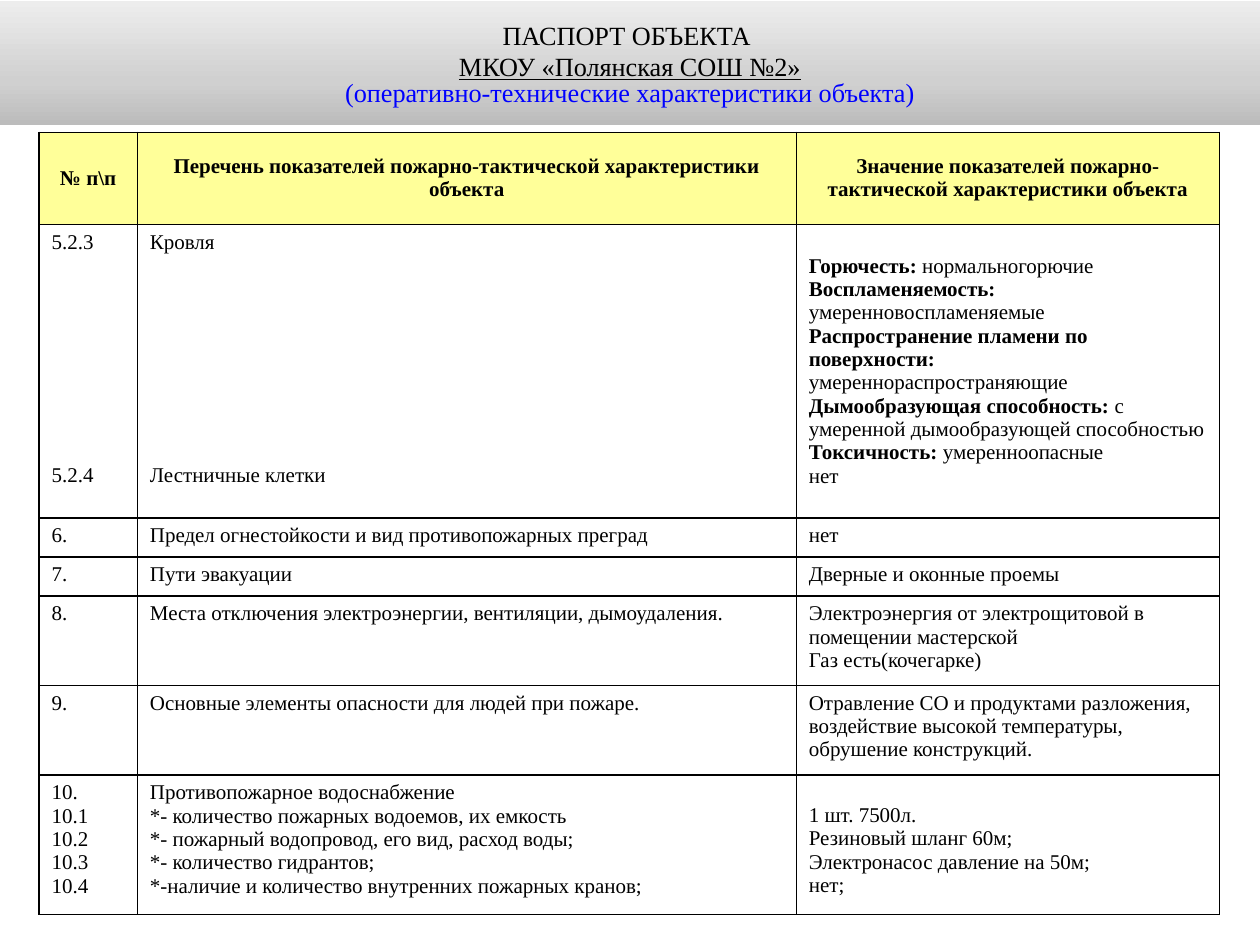
from copy import deepcopy
from dataclasses import dataclass

from lxml.etree import SubElement
from pptx import Presentation
from pptx.dml.color import RGBColor
from pptx.enum.shapes import MSO_SHAPE
from pptx.enum.text import MSO_ANCHOR, PP_ALIGN
from pptx.oxml.ns import qn
from pptx.util import Inches, Pt


@dataclass(frozen=True)
class Theme:
    font: str = "Times New Roman"
    title_size: float = 15
    body_size: float = 12
    text: str = "000000"
    accent: str = "0000FF"
    head_fill: str = "FFFF99"
    cell_fill: str = "FFFFFF"
    border: str = "000000"
    border_width: float = 1
    banner: tuple = ((0, "BCBCBC"), (0.35, "D0D0D0"), (1, "EDEDED"))


THEME = Theme()

COLS = (0.78, 5.23, 3.36)
ROW_HEIGHTS = (0.73, 2.33, 0.31, 0.31, 0.71, 0.71, 1.11)
ROWS = (
    ("№ п\\п",
     "Перечень показателей пожарно-тактической характеристики объекта",
     "Значение показателей пожарно-тактической характеристики объекта"),
    ("5.2.3\n5.2.4",
     "Кровля\nЛестничные клетки",
     "|Горючесть:| нормальногорючие\n"
     "|Воспламеняемость: |умеренновоспламеняемые\n"
     "|Распространение пламени по поверхности:|\n"
     "умереннораспространяющие\n"
     "|Дымообразующая способность: |с умеренной дымообразующей способностью\n"
     "|Токсичность:| умеренноопасные\n"
     "нет"),
    ("6.", "Предел огнестойкости и вид противопожарных преград", "нет"),
    ("7.", "Пути эвакуации", "Дверные и оконные проемы"),
    ("8.",
     "Места отключения электроэнергии, вентиляции, дымоудаления.",
     "Электроэнергия от электрощитовой в помещении мастерской\n"
     "Газ есть(кочегарке)"),
    ("9.",
     "Основные элементы опасности для людей при пожаре.",
     "Отравление СО и продуктами разложения, воздействие высокой температуры, "
     "обрушение конструкций."),
    ("10.\n10.1\n10.2\n10.3\n10.4",
     "Противопожарное водоснабжение\n"
     "*- количество пожарных водоемов, их емкость\n"
     "*- пожарный водопровод, его вид, расход воды;\n"
     "*- количество гидрантов;\n"
     "*-наличие и количество внутренних пожарных кранов;",
     "1 шт. 7500л.\nРезиновый шланг 60м;\nЭлектронасос давление на 50м;\nнет;"),
)
ROOF_ROW, WATER_ROW = 1, 6
STAIRS_GAP = 120
WATER_INSET = 0.23


def put_text(p, text, size=THEME.body_size, color=THEME.text, bold=False,
             underline=False, align=PP_ALIGN.LEFT, spacing=None, before=0):
    p.alignment = align
    p.space_before = Pt(before)
    if spacing:
        p.line_spacing = spacing
    for i, part in enumerate(text.split("|")):
        if part:
            r = p.add_run()
            r.text = part
            r.font.name = THEME.font
            r.font.size = Pt(size)
            r.font.bold = bold or i % 2 == 1
            r.font.underline = underline
            r.font.color.rgb = RGBColor.from_string(color)


class SlideBuilder:
    def __init__(self, prs, theme):
        self.theme = theme
        self.s = prs.slides.add_slide(prs.slide_layouts[6])

    def banner(self, x, y, w, h, lines):
        sp = self.s.shapes.add_shape(MSO_SHAPE.RECTANGLE, Inches(x), Inches(y),
                                     Inches(w), Inches(h))
        sp.shadow.inherit = False
        sp.line.fill.background()
        sp.fill.gradient()
        sp.fill.gradient_angle = 90
        stops = sp._element.spPr.find(".//" + qn("a:gsLst"))
        stops.insert(1, deepcopy(stops[0]))
        for stop, (position, color) in zip(sp.fill.gradient_stops, self.theme.banner):
            stop.position = position
            stop.color.rgb = RGBColor.from_string(color)
        tf = sp.text_frame
        tf.word_wrap = True
        tf.vertical_anchor = MSO_ANCHOR.MIDDLE
        tf.margin_left = tf.margin_right = Inches(0.09)
        tf.margin_top = tf.margin_bottom = Inches(0.05)
        for i, (text, fmt) in enumerate(lines):
            p = tf.add_paragraph() if i else tf.paragraphs[0]
            put_text(p, text, size=self.theme.title_size, align=PP_ALIGN.CENTER, **fmt)

    def table(self, x, y, cols, heights, rows):
        tbl = self.s.shapes.add_table(len(rows), len(cols), Inches(x), Inches(y),
                                      Inches(sum(cols)), Inches(sum(heights))).table
        for col, w in zip(tbl.columns, cols):
            col.width = Inches(w)
        for row, h in zip(tbl.rows, heights):
            row.height = Inches(h)
        for i, texts in enumerate(rows):
            for j, text in enumerate(texts):
                self.cell(tbl.cell(i, j), text, header=i == 0,
                          middle=i == 0 or (i, j) == (ROOF_ROW, 2),
                          gap=STAIRS_GAP if i == ROOF_ROW and j < 2 else 0,
                          top=WATER_INSET if (i, j) == (WATER_ROW, 2) else 0.05)

    def cell(self, cell, text, header, middle, gap, top):
        cell.margin_left = cell.margin_right = Inches(0.1)
        cell.margin_top, cell.margin_bottom = Inches(top), Inches(0.05)
        cell.vertical_anchor = MSO_ANCHOR.MIDDLE if middle else MSO_ANCHOR.TOP
        self.borders(cell)
        cell.fill.solid()
        cell.fill.fore_color.rgb = RGBColor.from_string(
            self.theme.head_fill if header else self.theme.cell_fill)
        tf = cell.text_frame
        for i, line in enumerate(text.split("\n")):
            p = tf.add_paragraph() if i else tf.paragraphs[0]
            put_text(p, line, bold=header, before=gap if i else 0,
                     align=PP_ALIGN.CENTER if header else PP_ALIGN.LEFT)

    def borders(self, cell):
        tcPr = cell._tc.get_or_add_tcPr()
        for side in ("a:lnL", "a:lnR", "a:lnT", "a:lnB"):
            ln = SubElement(tcPr, qn(side), w=str(Pt(self.theme.border_width)))
            fill = SubElement(ln, qn("a:solidFill"))
            SubElement(fill, qn("a:srgbClr"), val=self.theme.border)


def main():
    prs = Presentation()
    prs.slide_width, prs.slide_height = Inches(10), Inches(7.5)
    slide = SlideBuilder(prs, THEME)
    slide.table(0.31, 1.05, COLS, ROW_HEIGHTS, ROWS)
    slide.banner(0, 0.01, 10, 0.98, (
        ("ПАСПОРТ ОБЪЕКТА ", {}),
        ("МКОУ «Полянская СОШ №2»", {"underline": True}),
        ("(оперативно-технические характеристики объекта)",
         {"color": THEME.accent, "spacing": 0.8}),
    ))
    prs.save("out.pptx")


if __name__ == "__main__":
    main()
